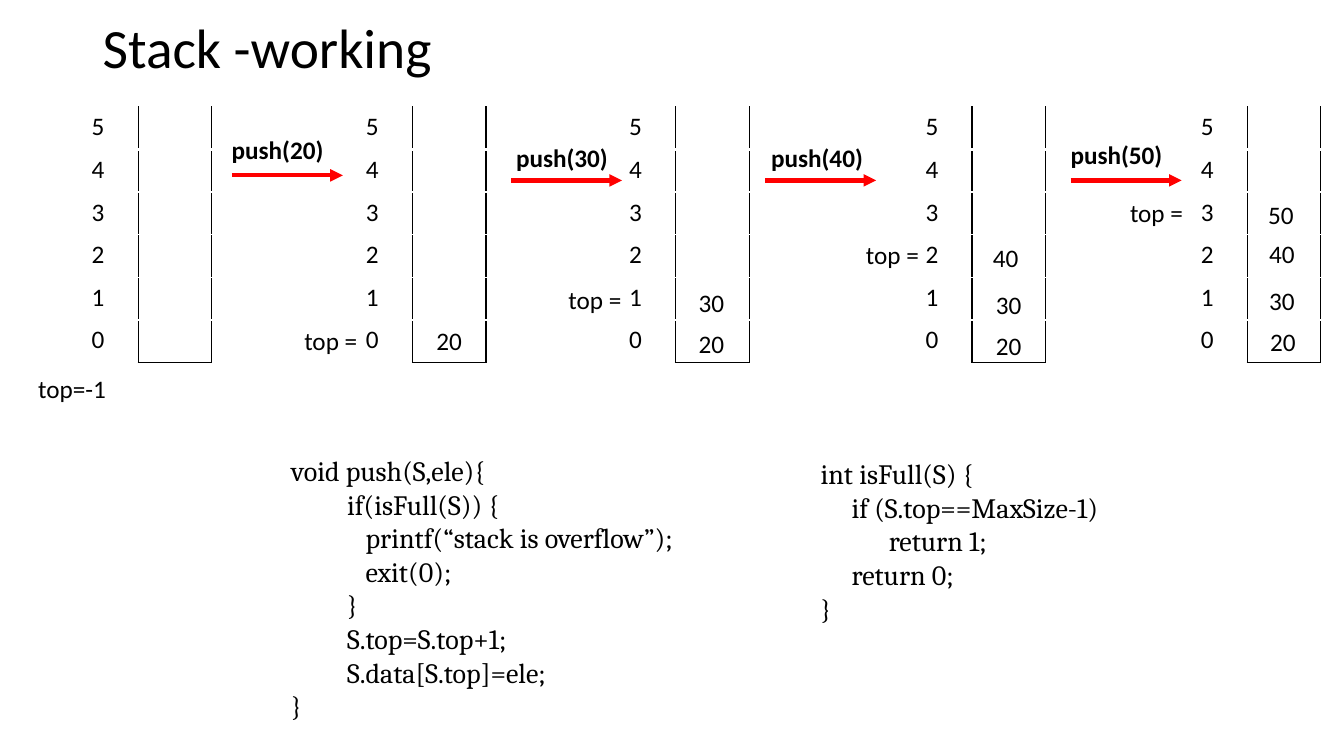
from lxml import etree
from pptx import Presentation
from pptx.dml.color import RGBColor
from pptx.enum.shapes import MSO_CONNECTOR
from pptx.enum.text import MSO_ANCHOR, MSO_AUTO_SIZE
from pptx.oxml.ns import qn
from pptx.util import Inches, Pt

STRAIGHT = MSO_CONNECTOR.STRAIGHT
MIDDLE = MSO_ANCHOR.MIDDLE
GROW = MSO_AUTO_SIZE.SHAPE_TO_FIT_TEXT
BLACK = RGBColor(0, 0, 0)
WHITE = RGBColor(255, 255, 255)
RED = RGBColor(255, 0, 0)

TITLE = "Stack -working"
EMPTY = ("top=-1", 0.28, 3.65)
SLOTS = ["5", "4", "3", "2", "1", "0"]
STACKS = [0.81, 3.53, 6.14, 9.08, 11.81]
ITEMS = [
    ("20", 4.23, 3.18),
    ("20", 6.83, 3.21), ("30", 6.83, 2.8),
    ("20", 9.78, 3.23), ("30", 9.78, 2.82), ("40", 9.75, 2.36),
    ("20", 12.5, 3.19), ("30", 12.49, 2.78),
    ("40", 12.49, 2.32), ("50", 12.48, 1.93),
]
TOPS = [(2.92, 3.18), (5.54, 2.77), (8.49, 2.33), (11.11, 1.91)]
PUSHES = [
    ("push(20)", 2.2, 1.28, 2.3, 1.74),
    ("push(30)", 5.02, 1.36, 5.07, 1.79),
    ("push(40)", 7.55, 1.36, 7.59, 1.79),
    ("push(50)", 10.52, 1.33, 10.62, 1.79),
]
CODE = [
    (2.79, 4.45, 2.79, [
        (0, "void push(S,ele){"),
        (9, "if(isFull(S)) {"),
        (12, "printf(“stack is overflow”);"),
        (12, "exit(0);"),
        (9, "}"),
        (9, "S.top=S.top+1;"),
        (9, "S.data[S.top]=ele;"),
        (0, "}"),
    ]),
    (8.04, 4.48, 1.78, [
        (0, "int isFull(S) {"),
        (5, "if (S.top==MaxSize-1)"),
        (11, "return 1;"),
        (5, "return 0;"),
        (0, "}"),
    ]),
]
STACK_TOP, ROW, COLS = 1.06, 0.423, (0.56, 0.73)
LINE_H, ARROW, STEP = 0.4, 1.1, 0.0615

deck = Presentation()
deck.slide_width, deck.slide_height = Inches(13.33), Inches(7.5)
slide = deck.slides.add_slide(deck.slide_layouts[6])
shapes = slide.shapes


def style(para, size, face="Calibri", bold=False):
    for run in para.runs:
        font = run.font
        font.size, font.name, font.bold = Pt(size), face, bold
        font.color.rgb = BLACK


def add_text(text, left, top, width, height=LINE_H, size=18, wrap=False,
             face="Calibri", bold=False):
    box = shapes.add_textbox(*map(Inches, (left, top, width, height)))
    frame = box.text_frame
    frame.word_wrap, frame.auto_size = wrap, GROW
    frame.text = text
    for para in frame.paragraphs:
        style(para, size, face, bold)
    return frame


def set_edge(cell, side, color, width=1):
    edge = etree.SubElement(cell._tc.get_or_add_tcPr(), qn("a:ln" + side),
                            w=str(Pt(width)))
    fill = etree.SubElement(edge, qn("a:solidFill"))
    etree.SubElement(fill, qn("a:srgbClr"), val=str(color))


def add_stack(left):
    count = len(SLOTS)
    table = shapes.add_table(count, 2, Inches(left), Inches(STACK_TOP),
                             Inches(sum(COLS)), Inches(ROW * count)).table
    table.first_row = table.horz_banding = False
    for col, width in zip(table.columns, COLS):
        col.width = Inches(width)
    for i, slot in enumerate(SLOTS):
        table.rows[i].height = Inches(ROW)
        label, cell = table.cell(i, 0), table.cell(i, 1)
        label.text = slot
        style(label.text_frame.paragraphs[0], 18)
        set_edge(label, "R", BLACK)
        set_edge(cell, "L", BLACK)
        set_edge(cell, "R", BLACK)
        if i:
            set_edge(cell, "T", WHITE)
        last = i == count - 1
        set_edge(cell, "B", BLACK if last else WHITE, 1 if i else 3)
        label.fill.background()
        cell.fill.background()


def add_arrow(left, top):
    arrow = shapes.add_connector(STRAIGHT, Inches(left), Inches(top),
                                 Inches(left + ARROW), Inches(top))
    arrow.line.color.rgb, arrow.line.width = RED, Pt(3)
    props = arrow._element.spPr
    etree.SubElement(props.find(qn("a:ln")), qn("a:tailEnd"), type="triangle")
    etree.SubElement(props, qn("a:effectLst"))


title = add_text(TITLE, 0.92, 0.17, 11.5, 0.66, 39.6, True)
title.auto_size = MSO_AUTO_SIZE.NONE
title.vertical_anchor = MIDDLE
title.paragraphs[0].line_spacing = 0.9

for left in STACKS:
    add_stack(left)
add_text(*EMPTY, 0.88)
for text, left, top in ITEMS:
    add_text(text, left, top, 0.46)
for left, top in TOPS:
    add_text("top =", left, top, 0.73)
for text, left, top, start, level in PUSHES:
    add_text(text, left, top, 1.2, wrap=True, bold=True)
    add_arrow(start, level)
for left, top, height, lines in CODE:
    frame = add_text("\n".join(text for _, text in lines), left, top, 4.31,
                     height, 20, True, "Cambria")
    for para, (depth, _) in zip(frame.paragraphs, lines):
        para._p.get_or_add_pPr().set("marL", str(Inches(depth * STEP)))

deck.save("out.pptx")
